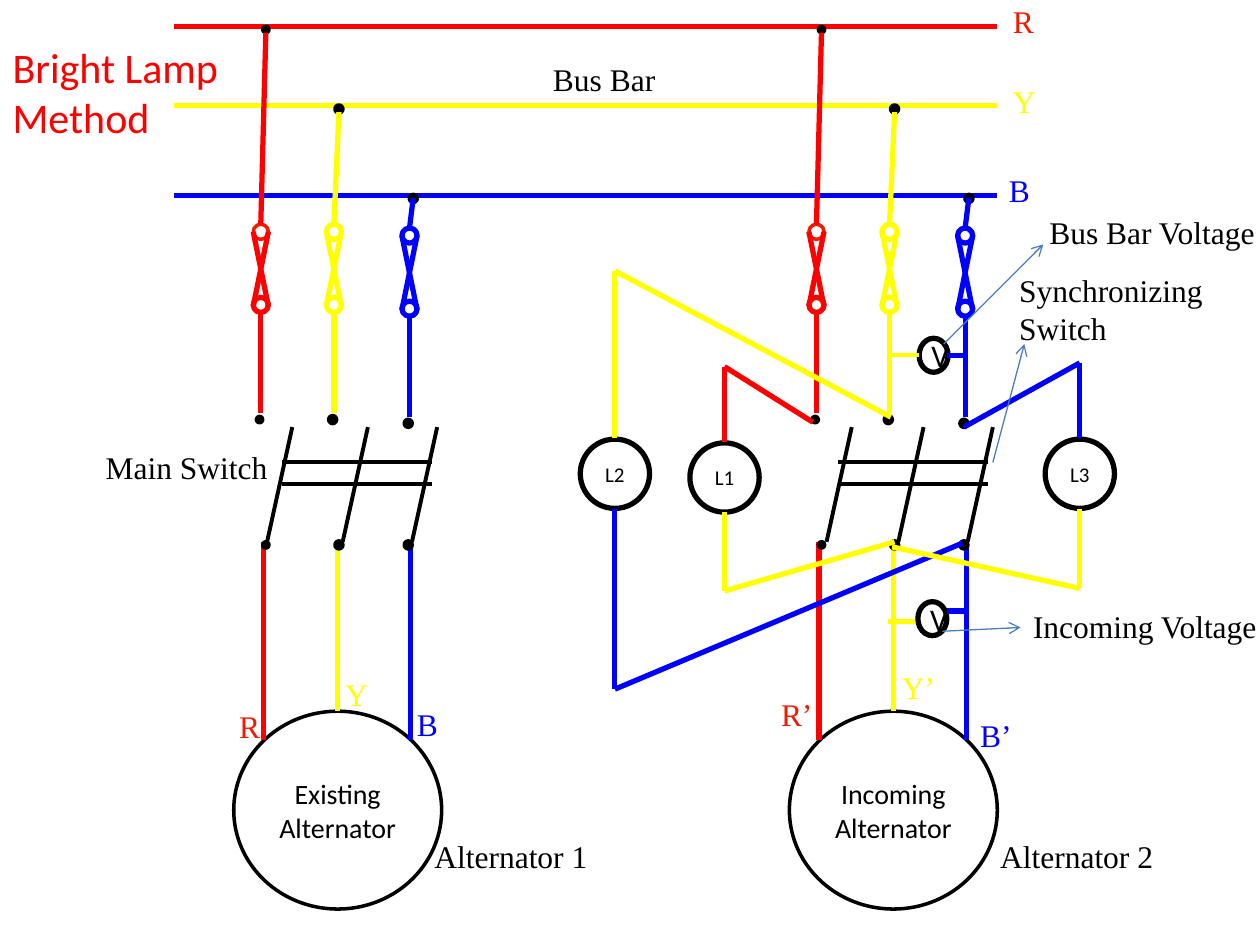
import itertools
from dataclasses import dataclass

import pptx
from lxml import etree
from pptx.dml.color import RGBColor
from pptx.enum.shapes import MSO_CONNECTOR, MSO_SHAPE
from pptx.enum.text import MSO_ANCHOR, MSO_AUTO_SIZE, PP_ALIGN
from pptx.oxml.ns import qn
from pptx.util import Inches, Pt


@dataclass(frozen=True)
class Theme:
    red: str = "FF0000"
    scarlet: str = "F31A03"
    yellow: str = "FFFF00"
    blue: str = "0000FF"
    black: str = "000000"
    white: str = "FFFFFF"
    pointer: str = "4B7EBC"
    sans: str = "Calibri"
    serif: str = "Times New Roman"
    title: int = 24
    label: int = 18
    machine: int = 16
    lamp: int = 12
    wire: float = 3
    outline: float = 2
    switch: float = 2.25
    thin: float = 0.75


T = Theme()
WIDTH, HEIGHT = 10, 7.5

# Alternators: name, distance from the first one, shift of the red switch blade
ALTERNATORS = [("Existing Alternator", 0, 0), ("Incoming Alternator", 4.41, 0.03)]

# Phases of the first alternator; x positions are centres, lengths in inches
PHASES = [
    dict(colour=T.red, ring=T.scarlet, thin=T.outline, bus=0.21, tap=2.11, start=0.26,
         fuse=2.07, drop=0, contact=2.06, foot=2.11, blade=2.12, lead=2.09, end=5.87),
    dict(colour=T.yellow, ring=T.yellow, thin=T.wire, bus=0.84, tap=2.69, start=0.89,
         fuse=2.65, drop=0, contact=2.64, foot=2.69, blade=2.72, lead=2.68, end=5.64),
    dict(colour=T.blue, ring=T.blue, thin=T.wire, bus=1.55, tap=3.28, start=1.57,
         fuse=3.25, drop=0.03, contact=3.24, foot=3.24, blade=3.27, lead=3.26, end=5.87),
]
BUS_LEFT, BUS_RIGHT = 1.38, 7.91
FUSE_TOP, FUSE_BOTTOM, RING = 1.84, 2.42, 0.12
CONTACT_Y, FOOT_Y, DOT = 3.33, 4.3, 0.05
BLADE_TOP, BLADE_LEAN = 3.39, 0.2
BARS_LEFT, BARS_WIDTH, BAR_ROWS = 2.24, 1.19, (3.67, 3.84)
MACHINE_X, MACHINE_Y, MACHINE_W, MACHINE_H = 2.68, 6.43, 1.65, 1.57

# Lamps: name, centre, then the upper and the lower wire
LAMP = 0.55
LAMPS = [
    ("L2", 4.88, 3.76, (T.yellow, [(4.88, 3.48), (4.88, 2.15), (7.07, 3.31)]),
     (T.blue, [(4.88, 4.04), (4.88, 5.47), (7.64, 4.31)])),
    ("L1", 5.75, 3.79, (T.red, [(5.75, 3.51), (5.75, 2.91), (6.45, 3.35)]),
     (T.yellow, [(5.75, 4.06), (5.75, 4.69), (7.1, 4.3)])),
    ("L3", 8.57, 3.76, (T.blue, [(8.57, 3.48), (8.57, 2.88), (7.65, 3.39)]),
     (T.yellow, [(8.57, 4.04), (8.57, 4.67), (7.08, 4.34)])),
]

# Voltmeters: centre, then colour, y, x from, x to and width of each wire
METER_W, METER_H = 0.23, 0.27
METERS = [
    (7.41, 2.82, [(T.yellow, 2.82, 7.29, 7.08, T.switch), (T.blue, 2.82, 7.52, 7.68, T.wire)]),
    (7.4, 4.91, [(T.yellow, 4.93, 7.26, 7.05, T.wire), (T.blue, 4.85, 7.52, 7.68, T.wire)]),
]

POINTERS = [((7.88, 3.67), (8.13, 2.73)), ((7.49, 2.73), (8.28, 1.94)),
            ((7.48, 5.01), (8.1, 4.98))]

# Labels: lines, colour, left, top, width
LABELS = [
    (["Alternator 1"], T.black, 3.35, 6.59, 1.43),
    (["Alternator 2"], T.black, 7.84, 6.59, 1.43),
    (["R"], T.scarlet, 7.94, -0.03, 0.37),
    (["R"], T.scarlet, 1.8, 5.56, 0.37),
    (["R’"], T.scarlet, 6.1, 5.47, 0.45),
    (["Y"], T.yellow, 7.94, 0.6, 0.38),
    (["Y’"], T.yellow, 7.06, 5.25, 0.47),
    (["Y"], T.yellow, 2.64, 5.31, 0.39),
    (["B"], T.blue, 7.91, 1.31, 0.37),
    (["B’"], T.blue, 7.68, 5.63, 0.45),
    (["B"], T.blue, 3.21, 5.55, 0.37),
    (["Main Switch"], T.black, 0.74, 3.51, 1.5),
    (["Synchronizing", "Switch"], T.black, 7.99, 2.1, 1.74),
    (["Bus Bar"], T.black, 4.29, 0.43, 1.02),
    (["Bus Bar Voltage"], T.black, 8.23, 1.64, 1.85),
    (["Incoming Voltage"], T.black, 8.1, 4.77, 1.99),
]
TITLE = ["Bright Lamp", "Method"]
LABEL_H, LABEL_LINE = 0.4, 0.31


def write(frame, lines, size, font=T.sans, colour=T.black, align=PP_ALIGN.LEFT,
          anchor=MSO_ANCHOR.TOP, wrap=True):
    frame.word_wrap = wrap
    frame.vertical_anchor = anchor
    for number, line in enumerate(lines):
        paragraph = frame.add_paragraph() if number else frame.paragraphs[0]
        paragraph.alignment = align
        run = paragraph.add_run()
        run.text = line
        run.font.size = Pt(size)
        run.font.name = font
        run.font.color.rgb = RGBColor.from_string(colour)


def wire(slide, points, colour, width=T.wire, arrow=False):
    """Join each point to the next with a straight connector."""
    for start, end in itertools.pairwise(points):
        line = slide.shapes.add_connector(
            MSO_CONNECTOR.STRAIGHT, *(Inches(v) for v in (*start, *end)))
        line.line.color.rgb = RGBColor.from_string(colour)
        line.line.width = Pt(width)
        if arrow:
            etree.SubElement(line.line._get_or_add_ln(), qn("a:tailEnd"), type="arrow")
        etree.SubElement(line._element.spPr, qn("a:effectLst"))


def circle(slide, x, y, width, height, line=T.black, weight=T.wire, fill=T.white,
           text=None, size=T.label):
    """Draw a round node centred on x, y."""
    node = slide.shapes.add_shape(
        MSO_SHAPE.FLOWCHART_CONNECTOR,
        *(Inches(v) for v in (x - width / 2, y - height / 2, width, height)))
    node.shadow.inherit = False
    node.fill.solid()
    node.fill.fore_color.rgb = RGBColor.from_string(fill)
    node.line.color.rgb = RGBColor.from_string(line)
    node.line.width = Pt(weight)
    if text:
        write(node.text_frame, [text], size, align=PP_ALIGN.CENTER, anchor=MSO_ANCHOR.MIDDLE)


def draw_phase(slide, phase, dx, blade_shift):
    colour = phase["colour"]
    top, bottom = FUSE_TOP + phase["drop"], FUSE_BOTTOM + phase["drop"]
    contact_y = CONTACT_Y + phase["drop"]
    fuse, tap, lead, foot = (phase[key] + dx for key in ("fuse", "tap", "lead", "foot"))
    blade = phase["blade"] + dx + blade_shift

    wire(slide, [(lead, phase["end"]), (lead, FOOT_Y)], colour)
    for x, y in ((foot, FOOT_Y + DOT / 2), (phase["contact"] + dx, contact_y),
                 (tap, phase["bus"] + DOT / 2)):
        circle(slide, x, y, DOT, DOT, weight=phase["thin"], fill=T.black)
    circle(slide, fuse, top, RING, RING, phase["ring"], phase["thin"])
    circle(slide, fuse, bottom, RING, RING, colour)
    for side in (-RING / 2, RING / 2):
        wire(slide, [(fuse + side, bottom + 0.01), (fuse - side, top)], colour)
    wire(slide, [(tap, phase["start"]), (fuse, top - RING / 2)], colour)
    wire(slide, [(fuse, bottom + 0.07), (fuse, contact_y - DOT)], colour)
    wire(slide, [(blade, FOOT_Y), (blade + BLADE_LEAN, BLADE_TOP)], T.black, T.switch)


def draw_alternator(slide, name, dx, red_shift):
    circle(slide, MACHINE_X + dx, MACHINE_Y, MACHINE_W, MACHINE_H, weight=T.outline,
           text=name, size=T.machine)
    for phase in PHASES:
        draw_phase(slide, phase, dx, red_shift if phase["colour"] == T.red else 0)
    left = BARS_LEFT + dx
    for y in BAR_ROWS:
        wire(slide, [(left, y), (left + BARS_WIDTH, y)], T.black, T.switch)


def main():
    deck = pptx.Presentation()
    deck.slide_width, deck.slide_height = Inches(WIDTH), Inches(HEIGHT)
    slide = deck.slides.add_slide(deck.slide_layouts[5])

    title = slide.shapes.title
    title.left, title.top, title.width, title.height = (
        Inches(v) for v in (0, 0.28, 2.01, 0.91))
    title.text_frame.auto_size = MSO_AUTO_SIZE.NONE
    write(title.text_frame, TITLE, T.title, colour=T.red)

    for phase in PHASES:
        wire(slide, [(BUS_LEFT, phase["bus"]), (BUS_RIGHT, phase["bus"])], phase["colour"])
    for alternator in ALTERNATORS:
        draw_alternator(slide, *alternator)
    for name, x, y, *wires in LAMPS:
        circle(slide, x, y, LAMP, LAMP, text=name, size=T.lamp)
        for colour, points in wires:
            wire(slide, points, colour)
    for x, y, wires in METERS:
        circle(slide, x, y, METER_W, METER_H, text="V")
        for colour, row, start, end, width in wires:
            wire(slide, [(start, row), (end, row)], colour, width)
    for lines, colour, left, top, width in LABELS:
        height = LABEL_H + LABEL_LINE * (len(lines) - 1)
        box = slide.shapes.add_textbox(*(Inches(v) for v in (left, top, width, height)))
        write(box.text_frame, lines, T.label, T.serif, colour, wrap=False)
    for pointer in POINTERS:
        wire(slide, pointer, T.pointer, T.thin, arrow=True)

    deck.save("out.pptx")


if __name__ == "__main__":
    main()
